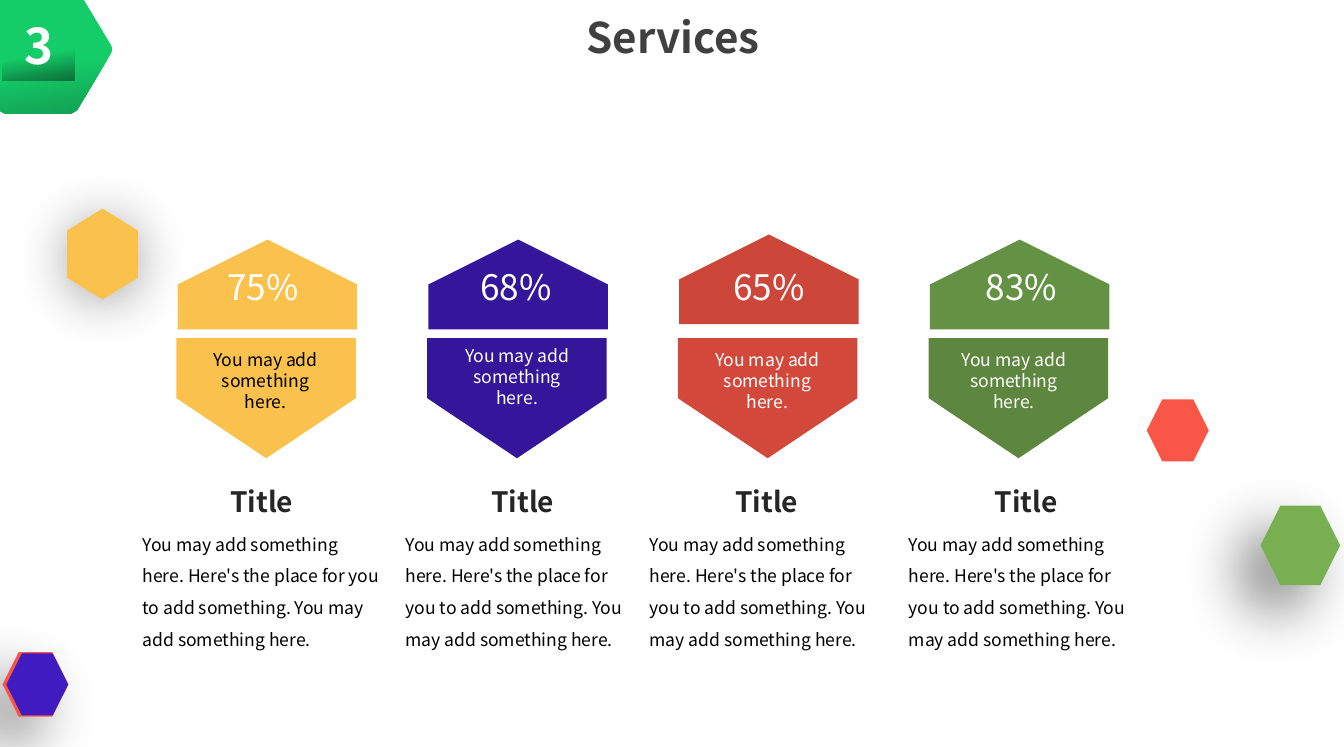
from lxml import etree
from pptx import Presentation
from pptx import util as u
from pptx.dml.color import RGBColor
from pptx.enum import shapes, text
from pptx.oxml.ns import qn

FONT = "Noto Sans CJK SC"
COLOURS = {
    "white": "FFFFFF", "black": "000000", "heading": "404040", "title": "262626",
    "emerald": "14CD68", "forest": "0B6E38", "shade": "129C53",
    "amber": "FAC14D", "coral": "F95647", "leaf": "78AF51", "violet": "401BC0",
    "indigo": "33169A", "red": "CC463A", "brick": "D2493C",
    "green": "649244", "moss": "5D873F",
}
HINT = "You may add something here."
DETAIL = ("You may add something here. Here's the place for you to add something. "
          "You may add something here.")
SHAPE = shapes.MSO_SHAPE
CENTER, LEFT = text.PP_ALIGN.CENTER, text.PP_ALIGN.LEFT


def colour(name):
    return RGBColor.from_string(COLOURS[name])


class ServicesSlide:
    def __init__(self, presentation):
        self.slide = presentation.slides.add_slide(presentation.slide_layouts[5])

    def plain(self, shape, fill):
        shape.shadow.inherit = False
        shape.line.fill.background()
        shape.fill.solid()
        shape.fill.fore_color.rgb = colour(fill)
        return shape

    def shape(self, kind, box, fill, rotation=0):
        shape = self.slide.shapes.add_shape(kind, *map(u.Inches, box))
        shape.rotation = rotation
        return self.plain(shape, fill)

    def gradient(self, shape, end):
        shape.fill.gradient()
        shape.fill.gradient_angle = 280
        stops = zip(shape.fill.gradient_stops, (0.62, 1), ("emerald", end))
        for stop, position, name in stops:
            stop.position = position
            stop.color.rgb = colour(name)

    def shadow(self, shape, opacity, blur, distance, direction):
        effects = shape._element.spPr.find(qn("a:effectLst"))
        outer = etree.SubElement(
            effects, qn("a:outerShdw"), blurRad=str(u.Pt(blur)), dist=str(u.Pt(distance)),
            dir=str(direction * 60000), algn="ctr", rotWithShape="0")
        black = etree.SubElement(outer, qn("a:srgbClr"), val=COLOURS["black"])
        etree.SubElement(black, qn("a:alpha"), val=str(opacity * 1000))

    def badge_hexagon(self, center_x, center_y, scale):
        # One quarter of the rounded outline, mirrored to the other three
        quarter = [(0.26, -0.51), (0.31, -0.48), (0.58, -0.03), (0.59, 0)]
        right = quarter + [(x, -y) for x, y in quarter[-2::-1]]
        outline = right + [(-x, -y) for x, y in right]
        points = [(u.Inches(center_x + x * scale), u.Inches(center_y + y * scale))
                  for x, y in outline]
        builder = self.slide.shapes.build_freeform(*points[0])
        builder.add_line_segments(points[1:], close=True)
        hexagon = self.plain(builder.convert_to_shape(), "emerald")
        self.gradient(hexagon, "shade")

    def add_text(self, paragraph, words, size, color, bold=False, align=CENTER):
        paragraph.alignment = align
        run = paragraph.add_run()
        run.text = words
        run.font.name, run.font.size, run.font.bold = FONT, u.Pt(size), bold
        run.font.color.rgb = colour(color)

    def text_box(self, box):
        frame = self.slide.shapes.add_textbox(*map(u.Inches, box)).text_frame
        frame.word_wrap = True
        return frame

    def label(self, box, words, size, color):
        self.add_text(self.text_box(box).paragraphs[0], words, size, color)

    def description(self, left, width):
        frame = self.text_box((left, 3.78, width, 1.52))
        self.add_text(frame.paragraphs[0], "Title", 16, "title", bold=True)
        paragraph = frame.add_paragraph()
        paragraph.line_spacing = 1.5
        paragraph.space_before = u.Pt(3)
        self.add_text(paragraph, DETAIL, 10, "black", align=LEFT)

    def heading(self, words):
        title = self.slide.shapes.title
        title.left, title.top, title.width, title.height = map(
            u.Inches, (4.64, 0.28, 1.52, 0.21))
        frame = title.text_frame
        frame.margin_left = frame.margin_right = 0
        frame.margin_top = frame.margin_bottom = 0
        frame.vertical_anchor = text.MSO_ANCHOR.TOP
        frame.auto_size = text.MSO_AUTO_SIZE.NONE
        frame.word_wrap = True
        frame.paragraphs[0].line_spacing = u.Pt(15)
        self.add_text(frame.paragraphs[0], words, 24, "heading", bold=True, align=LEFT)


def main():
    presentation = Presentation()
    presentation.slide_width = u.Inches(10.63)
    presentation.slide_height = u.Inches(5.91)
    page = ServicesSlide(presentation)

    # Numbered badge
    for scale in (1, 0.99):
        page.badge_hexagon(0.3, 0.39, scale)
    number = page.shape(SHAPE.RECTANGLE, (0.02, 0.07, 0.57, 0.57), "emerald")
    page.gradient(number, "forest")
    page.add_text(number.text_frame.paragraphs[0], "3", 28, "white", bold=True)

    # Scattered hexagons: box, fill, rotation, shadow
    hexagons = [
        ((0.45, 1.73, 0.72, 0.56), "amber", 90, (37, 31, 3, 90)),
        ((9.07, 3.16, 0.49, 0.49), "coral", 0, None),
        ((9.97, 4, 0.63, 0.63), "leaf", 0, (50, 35, 20, 135)),
        ((9.98, 4.01, 0.6, 0.59), "leaf", 0, None),
        ((0.02, 5.16, 0.52, 0.51), "coral", 0, (50, 35, 20, 135)),
        ((0.05, 5.17, 0.49, 0.49), "violet", 0, None),
    ]
    for box, fill, rotation, shadow in hexagons:
        hexagon = page.shape(SHAPE.HEXAGON, box, fill, rotation)
        hexagon.adjustments[0] = 0.31 if rotation else 0.25
        if shadow:
            page.shadow(hexagon, *shadow)

    # Services: share, upper fill, lower fill, hint colour, upper top, hint top,
    # hint left, description left and width
    services = [
        ("75%", "amber", "amber", "black", 1.54, 2.71, 1.53, 1.03, 2.08),
        ("68%", "indigo", "indigo", "white", 1.54, 2.68, 3.52, 3.11, 2.05),
        ("65%", "red", "brick", "white", 1.5, 2.71, 5.5, 5.04, 2.05),
        ("83%", "green", "moss", "white", 1.54, 2.71, 7.45, 7.09, 2.05),
    ]
    pitch = (7.71 - 1.76) / 3
    for index, service in enumerate(services):
        share, upper, lower, ink, top, hint_top, hint_left, left, width = service
        offset = index * pitch
        page.shape(SHAPE.PENTAGON, (1.76 + offset, top, 0.71, 1.42), upper, 270)
        page.label((1.47 + index * 2, 2.05, 1.22, 0.44), share, 20, "white")
        page.shape(SHAPE.PENTAGON, (1.63 + offset, 2.44, 0.95, 1.42), lower, 90)
        page.label((hint_left, hint_top, 1.14, 0.6), HINT, 10, ink)
        page.description(left, width)

    page.heading("Services")
    presentation.save("out.pptx")


if __name__ == "__main__":
    main()
